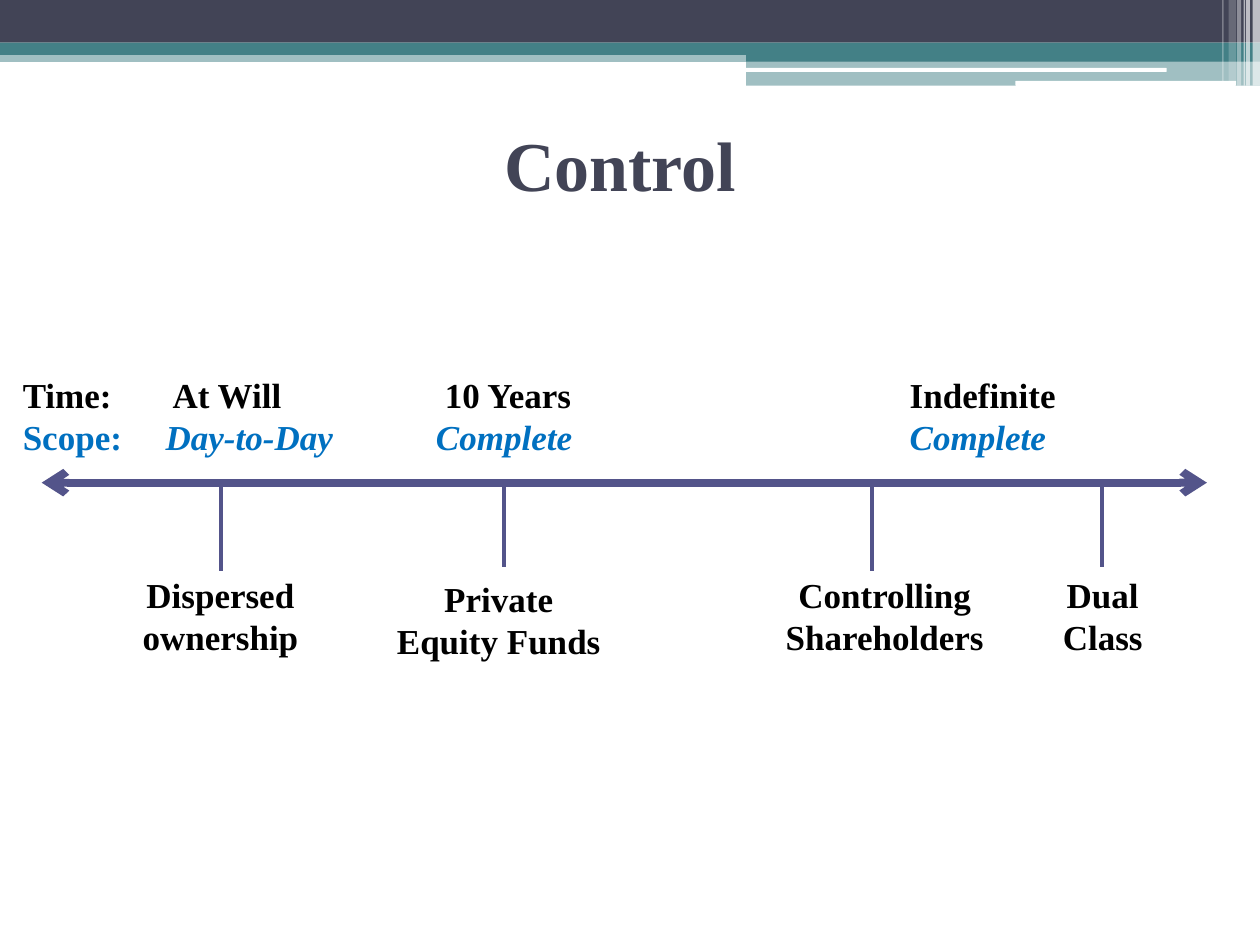
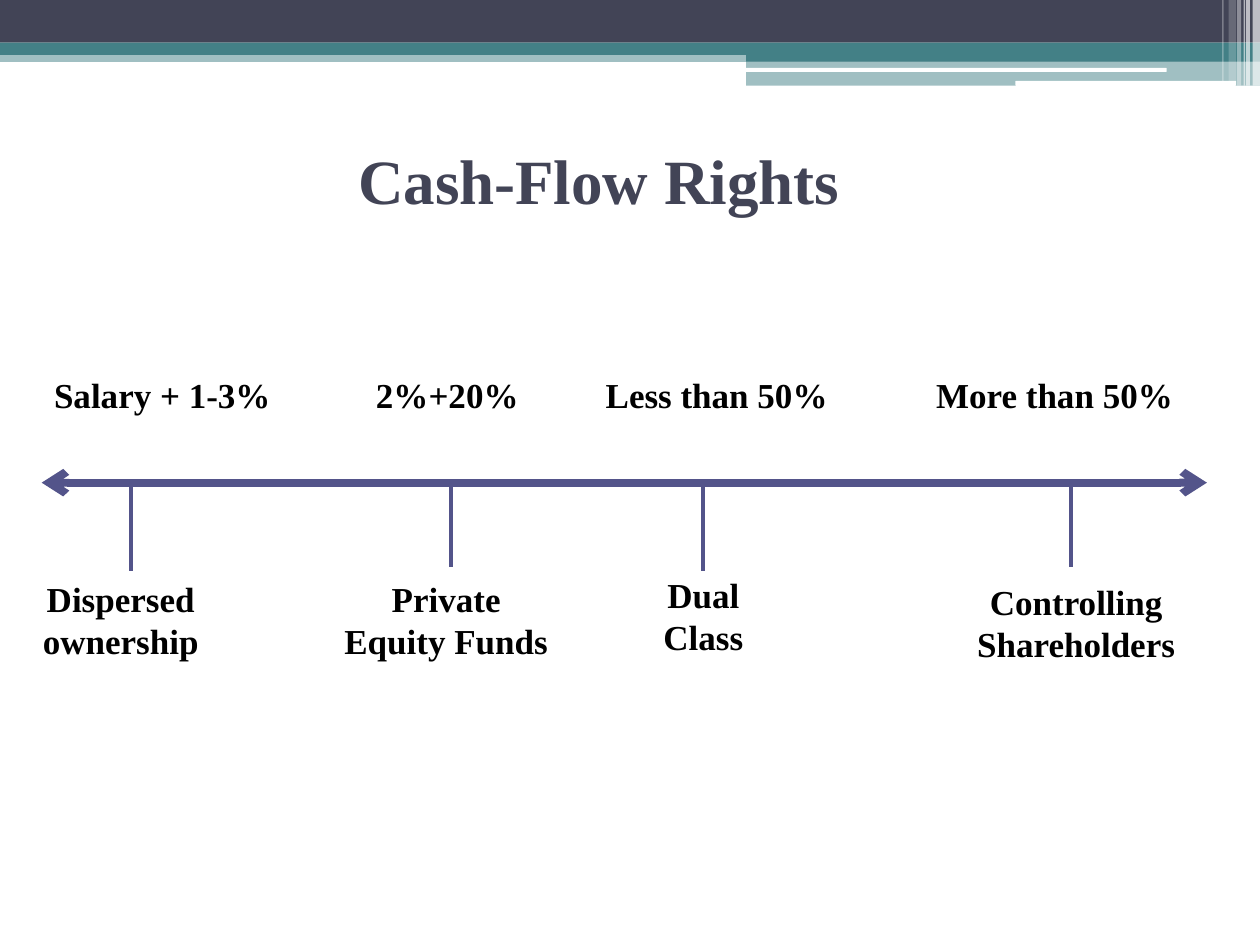
import pptx
import pptx.dml.color
import pptx.enum.shapes
import pptx.enum.text
import pptx.oxml
import pptx.oxml.ns
import pptx.util
from dataclasses import dataclass

Cm, Pt = pptx.util.Cm, pptx.util.Pt
SHAPE = pptx.enum.shapes.MSO_SHAPE
ALIGN = pptx.enum.text.PP_ALIGN
ANCHOR = pptx.enum.text.MSO_ANCHOR


@dataclass(frozen=True)
class Theme:
    font: str = "Times New Roman"
    navy: str = "424456"
    teal: str = "438086"
    white: str = "FFFFFF"
    axis: str = "53548A"
    text: str = "000000"
    scope: str = "0070C0"
    body_size: float = 20
    axis_width: float = 4.5
    tick_width: float = 2.25


THEME = Theme()

# Content; all lengths in cm.
# Stops: label, (left, top, width) of the label, tick x, tick end.
# Terms: entries of a row, tab stops, colour, whether entries after the first are italic.
SLIDES = [
    {
        "title": ("Control", 40, (1.07, 1.47, 22.86, 5.28)),
        "stops": [
            ("Dispersed ownership", (2.12, 11.43, 4.65), 4.45, 11.51),
            ("Private Equity Funds", (7.62, 11.51, 4.87), 10.16, 11.43),
            ("Controlling Shareholders", (15.4, 11.43, 4.87), 17.58, 11.51),
            ("Dual Class", (21.17, 11.43, 2.12), 22.22, 11.43),
        ],
        "terms_box": (0.21, 7.41, 23.07, 1.96),
        "terms": [
            (["Time:", "At Will", "10 Years", "Indefinite"],
             (3.02, 8.51, 17.88), THEME.text, False),
            (["Scope:", "Day-to-Day", "Complete", "Complete"],
             (2.88, 8.33, 17.88), THEME.scope, True),
        ],
    },
    {
        "title": ("Cash-Flow Rights", 36, (0.64, 2.96, 22.86, 2.77)),
        "stops": [
            ("Dispersed ownership", (0.21, 11.51, 4.45), 2.64, 11.51),
            ("Private Equity Funds", (6.56, 11.51, 4.87), 9.1, 11.43),
            ("Dual Class", (13.12, 11.43, 2.12), 14.18, 11.51),
            ("Controlling Shareholders", (19.26, 11.58, 4.87), 21.59, 11.43),
        ],
        "terms_box": (0.84, 7.41, 23.5, 1.12),
        "terms": [
            (["Salary + 1-3%", "2%+20%", "Less than 50%", "More than 50%"],
             (6.49, 11.12, 17.78), THEME.text, False),
        ],
    },
]

# Shared header: left, top, width, height, colour, opacity in percent
HEADER_BANDS = [
    (0, 1.02, 25.4, 0.23, THEME.teal, 50),
    (0, 0, 25.4, 0.86, THEME.navy, 100),
    (0, 0.86, 25.4, 0.25, THEME.teal, 100),
    (15.04, 0.99, 10.36, 0.25, THEME.teal, 100),
    (15.04, 1.23, 10.36, 0.5, THEME.teal, 50),
]
HEADER_BARS = [
    (15.01, 1.37, 8.51, 0.08, THEME.white, 100),
    (20.47, 1.63, 4.45, 0.1, THEME.white, 100),
]
HEADER_STRIPES = [
    (left, 0, width, height, THEME.white, opacity)
    for left, width, height, opacity in [
        (25.25, 0.15, 1.73, 65), (25.12, 0.08, 1.73, 65),
        (25.07, 0.03, 1.73, 60), (24.94, 0.08, 1.73, 40),
        (24.77, 0.15, 1.63, 20), (24.64, 0.03, 1.63, 30),
    ]
]
AXIS_LEFT, AXIS_RIGHT, AXIS_Y = 0.84, 24.33, 9.73
LABEL_HEIGHT = 1.96


def rgb(value):
    return pptx.dml.color.RGBColor.from_string(value)


def add_xml(parent, tag, **attributes):
    element = pptx.oxml.parse_xml(f"<a:{tag} {pptx.oxml.ns.nsdecls('a')}/>")
    for key, value in attributes.items():
        element.set(key, str(value))
    parent.append(element)
    return element


def add_block(slide, kind, left, top, width, height, color, opacity):
    block = slide.shapes.add_shape(kind, Cm(left), Cm(top), Cm(width), Cm(height))
    block.shadow.inherit = False
    block.fill.solid()
    block.fill.fore_color.rgb = rgb(color)
    block.line.fill.background()
    if opacity < 100:
        fill_color = block.element.spPr.find(".//" + pptx.oxml.ns.qn("a:srgbClr"))
        add_xml(fill_color, "alpha", val=opacity * 1000)


def add_header(slide):
    for band in HEADER_BANDS:
        add_block(slide, SHAPE.RECTANGLE, *band)
    for bar in HEADER_BARS:
        add_block(slide, SHAPE.ROUNDED_RECTANGLE, *bar)
    for stripe in HEADER_STRIPES:
        add_block(slide, SHAPE.RECTANGLE, *stripe)


def add_frame(slide, left, top, width, height):
    frame = slide.shapes.add_textbox(Cm(left), Cm(top), Cm(width), Cm(height)).text_frame
    frame.word_wrap = True
    return frame


def style_run(run, size, color, italic=None):
    run.font.name = THEME.font
    run.font.size = Pt(size)
    run.font.bold = True
    run.font.italic = italic
    run.font.color.rgb = rgb(color)


def add_centred(slide, text, box, size, color):
    frame = add_frame(slide, *box)
    frame.text = text
    frame.paragraphs[0].alignment = ALIGN.CENTER
    style_run(frame.paragraphs[0].runs[0], size, color)
    return frame


def add_line(slide, x1, y1, x2, y2, width, arrows=False):
    line = slide.shapes.add_connector(
        pptx.enum.shapes.MSO_CONNECTOR.STRAIGHT, Cm(x1), Cm(y1), Cm(x2), Cm(y2))
    line.line.color.rgb = rgb(THEME.axis)
    line.line.width = Pt(width)
    if arrows:
        for end in ("headEnd", "tailEnd"):
            add_xml(line.line._get_or_add_ln(), end, type="arrow")
    add_xml(line.element.spPr, "effectLst")


def add_terms(slide, box, rows):
    frame = add_frame(slide, *box)
    for index, (entries, tab_stops, color, italic) in enumerate(rows):
        row = frame.paragraphs[0] if index == 0 else frame.add_paragraph()
        tabs = add_xml(row._p.get_or_add_pPr(), "tabLst")
        for stop in tab_stops:
            add_xml(tabs, "tab", pos=int(Cm(stop)), algn="l")
        for column, entry in enumerate(entries):
            run = row.add_run()
            run.text = entry if column == 0 else "\t" + entry
            style_run(run, THEME.body_size, color, italic and column > 0)


def build_slide(deck, content):
    slide = deck.slides.add_slide(deck.slide_layouts[6])
    add_header(slide)

    # Title
    title, title_size, title_box = content["title"]
    # The title sits half a line above the middle of its area
    left, top, width, height = title_box
    line_height = round(title_size * 1.15 * 2.54 / 72, 2)
    heading = add_centred(slide, title, (left, top, width, height - line_height),
                          title_size, THEME.navy)
    heading.vertical_anchor = ANCHOR.MIDDLE

    # Axis with its stops
    add_line(slide, AXIS_LEFT, AXIS_Y, AXIS_RIGHT, AXIS_Y, THEME.axis_width, arrows=True)
    for label, label_box, tick_x, tick_end in content["stops"]:
        add_centred(slide, label, (*label_box, LABEL_HEIGHT), THEME.body_size, THEME.text)
        add_line(slide, tick_x, AXIS_Y, tick_x, tick_end, THEME.tick_width)

    # Terms above the axis
    add_terms(slide, content["terms_box"], content["terms"])


def main():
    deck = pptx.Presentation()
    deck.slide_width, deck.slide_height = Cm(25.4), Cm(19.05)
    for content in SLIDES:
        build_slide(deck, content)
    deck.save("out.pptx")


if __name__ == "__main__":
    main()
